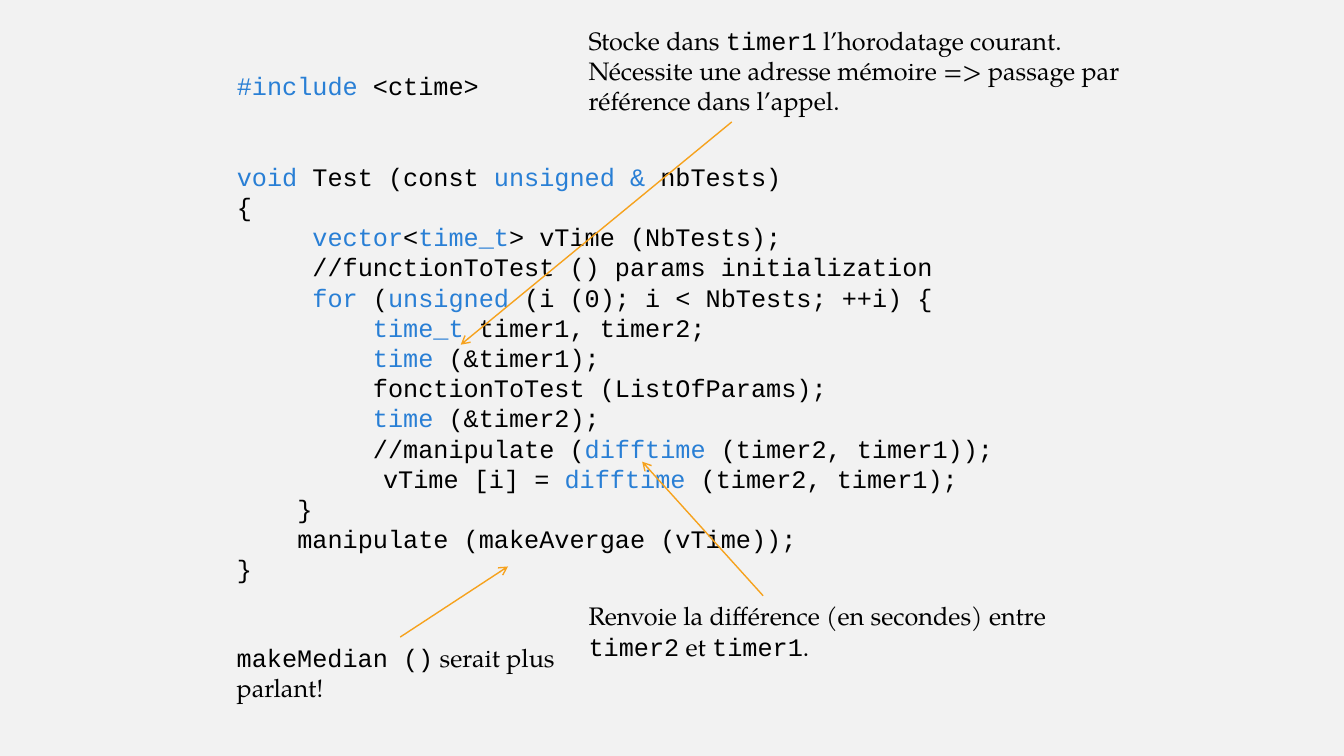
from dataclasses import dataclass

from lxml.etree import SubElement
from pptx import Presentation
from pptx.dml.color import RGBColor
from pptx.enum.shapes import MSO_CONNECTOR
from pptx.enum.text import MSO_AUTO_SIZE
from pptx.oxml.ns import qn
from pptx.slide import Slide
from pptx.text.text import TextFrame, _Paragraph
from pptx.util import Inches, Pt

COLORS = {"background": "F2F2F2", "text": "000000", "keyword": "297FD5", "arrow": "F6A21D"}
CODE_FONT = "Courier New"
NOTE_FONT = "TeX Gyre Pagella"
FONT_SIZE = 18
LINE_PITCH = 21.57
CHARACTER_WIDTH = 0.6 * FONT_SIZE
WIDTH, HEIGHT = Inches(13.33), Inches(7.5)


@dataclass(frozen=True)
class Style:
    font: str
    color: str


PLAIN_CODE = Style(CODE_FONT, "text")
KEYWORD = Style(CODE_FONT, "keyword")
PLAIN_NOTE = Style(NOTE_FONT, "text")


@dataclass(frozen=True)
class Box:
    """Place and size in percent of the slide."""
    left: float
    top: float
    width: float
    height: float


@dataclass(frozen=True)
class CodeLine:
    """Pieces between bars are keywords; indent counts characters."""
    text: str
    indent: float = 0
    blank_lines_before: int = 0


@dataclass(frozen=True)
class Note:
    """Pieces between bars are code; arrow ends are in percent of the slide."""
    box: Box
    paragraphs: tuple[str, ...]
    arrow_start: tuple[float, float]
    arrow_end: tuple[float, float]


CODE_BOX = Box(16.88, 8.67, 64.43, 70)
CODE = (
    CodeLine("|#include| <ctime>"),
    CodeLine("|void |Test (const |unsigned & |nbTests)", blank_lines_before=2),
    CodeLine("{"),
    CodeLine("|vector|<|time_t|> vTime (NbTests);", 5),
    CodeLine("//functionToTest () params initialization", 5),
    CodeLine("|for| (|unsigned |(i (0); i < NbTests; ++i) {", 5),
    CodeLine("|time_t |timer1, timer2;", 9),
    CodeLine("|time| (&timer1);", 9),
    CodeLine("fonctionToTest (ListOfParams);", 9),
    CodeLine("|time| (&timer2);", 9),
    CodeLine("//manipulate (|difftime |(timer2, timer1));", 9),
    CodeLine("vTime [i] = |difftime |(timer2, timer1);", 9.67),
    CodeLine("}", 4),
    CodeLine("manipulate (makeAvergae (vTime));", 4),
    CodeLine("}"),
)
NOTES = (
    Note(Box(43.05, 2.67, 44.4, 13.47),
         ("Stocke dans |timer1| l’horodatage courant.",
          "Nécessite une adresse mémoire => passage par référence dans l’appel."),
         (54.45, 16.13), (34.28, 45.6)),
    Note(Box(43.05, 78.8, 41.63, 9.47),
         ("Renvoie la différence (en secondes) entre |timer2| et |timer1|.",),
         (56.78, 78.8), (47.78, 61.07)),
    Note(Box(16.88, 84.27, 27.23, 9.47),
         ("|makeMedian ()| serait plus parlant!",),
         (29.78, 84.27), (37.8, 74.93)),
)


def color(name: str) -> RGBColor:
    return RGBColor.from_string(COLORS[name])


def across(percent: float) -> int:
    return round(WIDTH * percent / 100)


def down(percent: float) -> int:
    return round(HEIGHT * percent / 100)


def add_text_frame(slide: Slide, box: Box) -> TextFrame:
    shape = slide.shapes.add_textbox(
        across(box.left), down(box.top), across(box.width), down(box.height))
    text_frame = shape.text_frame
    text_frame.word_wrap = True
    text_frame.auto_size = MSO_AUTO_SIZE.SHAPE_TO_FIT_TEXT
    return text_frame


def next_paragraph(text_frame: TextFrame, index: int) -> _Paragraph:
    return text_frame.add_paragraph() if index else text_frame.paragraphs[0]


def write(paragraph: _Paragraph, text: str, plain: Style, marked: Style) -> None:
    for index, piece in enumerate(text.split("|")):
        if not piece:
            continue
        style = marked if index % 2 else plain
        run = paragraph.add_run()
        run.text = piece
        run.font.name = style.font
        run.font.size = Pt(FONT_SIZE)
        run.font.color.rgb = color(style.color)


def add_code(slide: Slide) -> None:
    text_frame = add_text_frame(slide, CODE_BOX)
    for index, line in enumerate(CODE):
        paragraph = next_paragraph(text_frame, index)
        paragraph.line_spacing = Pt(LINE_PITCH)
        paragraph.space_before = Pt(line.blank_lines_before * LINE_PITCH)
        properties = paragraph._p.get_or_add_pPr()
        properties.set("marL", str(Pt(line.indent * CHARACTER_WIDTH)))
        properties.set("indent", "0")
        write(paragraph, line.text, PLAIN_CODE, KEYWORD)


def add_arrow(slide: Slide, start: tuple[float, float], end: tuple[float, float]) -> None:
    connector = slide.shapes.add_connector(
        MSO_CONNECTOR.STRAIGHT, across(start[0]), down(start[1]), across(end[0]), down(end[1]))
    connector.line.color.rgb = color("arrow")
    connector.line.width = Pt(1)
    SubElement(connector.line._get_or_add_ln(), qn("a:tailEnd"), type="arrow")
    SubElement(connector._element.spPr, qn("a:effectLst"))


def add_note(slide: Slide, note: Note) -> None:
    add_arrow(slide, note.arrow_start, note.arrow_end)
    text_frame = add_text_frame(slide, note.box)
    for index, text in enumerate(note.paragraphs):
        write(next_paragraph(text_frame, index), text, PLAIN_NOTE, PLAIN_CODE)


def main() -> None:
    presentation = Presentation()
    presentation.slide_width, presentation.slide_height = WIDTH, HEIGHT
    slide = presentation.slides.add_slide(presentation.slide_layouts[6])
    slide.background.fill.solid()
    slide.background.fill.fore_color.rgb = color("background")

    # Code listing
    add_code(slide)

    # Notes with their arrows
    for note in NOTES:
        add_note(slide, note)

    presentation.save("out.pptx")


if __name__ == "__main__":
    main()
